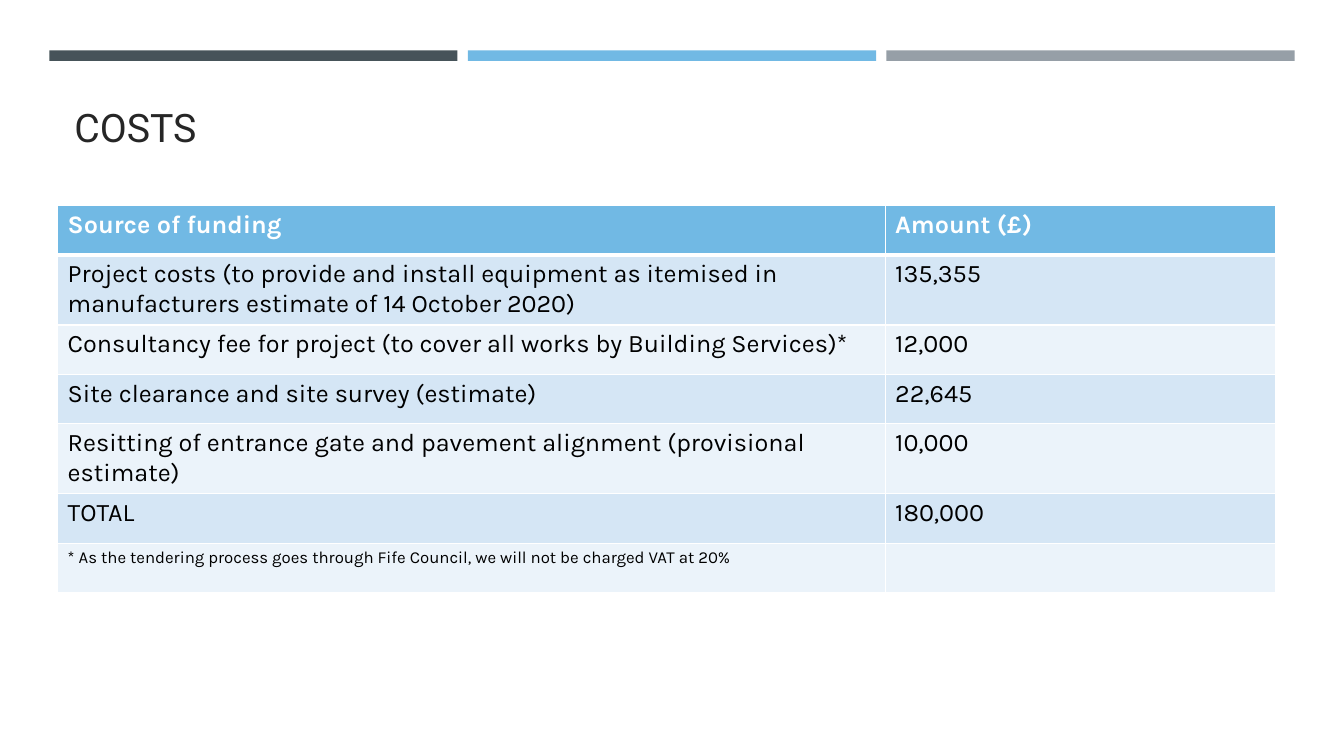
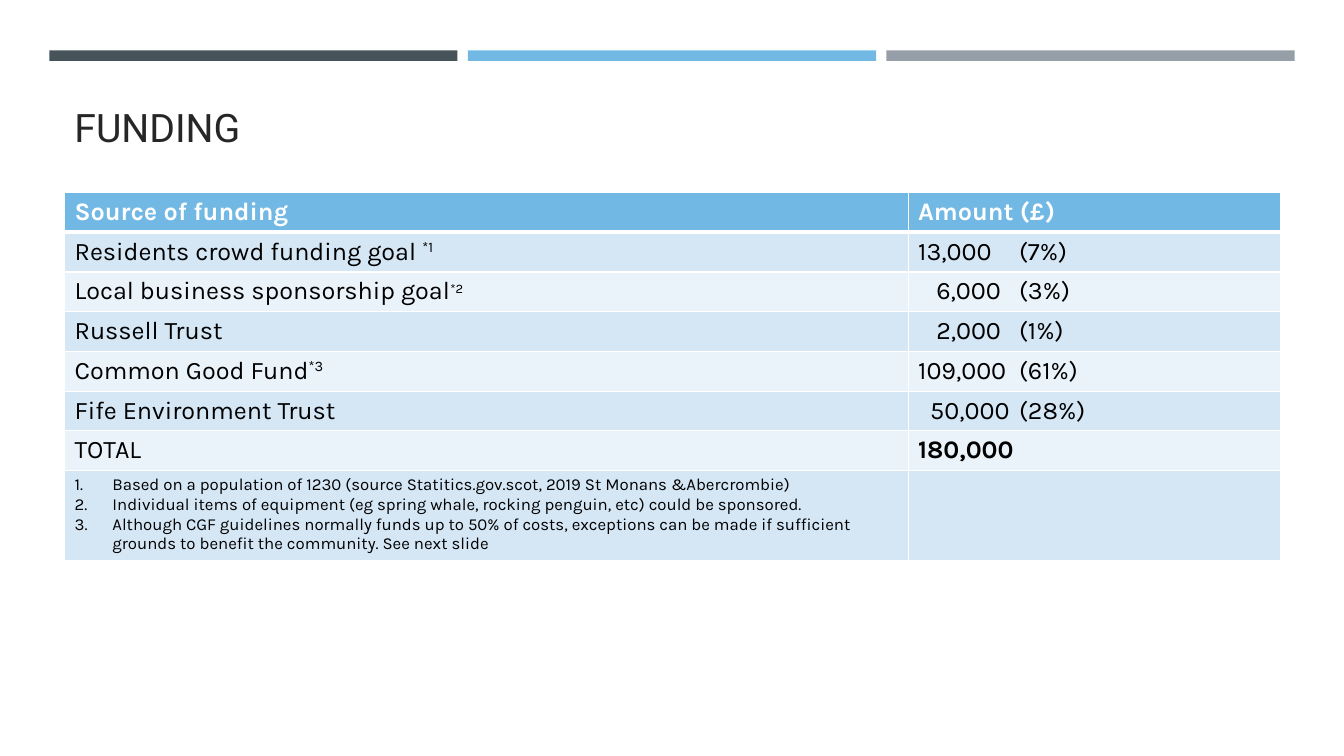
"""Build the costs and funding slides."""
from lxml import etree
from pptx import Presentation
from pptx.dml.color import RGBColor
from pptx.enum import shapes, text
from pptx.oxml.ns import qn
from pptx.util import Pt

COLOURS = {
    "slate": "465359", "blue": "71B9E4", "grey": "969FA7", "title": "262626",
    "white": "FFFFFF", "black": "000000", "odd": "D5E6F5", "even": "EBF3FA",
}
TITLE_FONT, BODY_FONT = "Roboto", "Karla"
BODY_SIZE, NOTE_SIZE = 18, 12
HEADER = ("Source of funding", "Amount (£)")

COSTS = [
    HEADER,
    ("Project costs (to provide and install equipment as itemised in "
     "manufacturers estimate of 14 October 2020)", "135,355"),
    ("Consultancy fee for project (to cover all works by Building Services)*", "12,000"),
    ("Site clearance and site survey (estimate)", "22,645"),
    ("Resitting of entrance gate and pavement alignment (provisional estimate)", "10,000"),
    ("TOTAL", "180,000"),
    ("* As the tendering process goes through Fife Council, "
     "we will not be charged VAT at 20%", ""),
]
FUNDING = [
    HEADER,
    ("Residents crowd funding goal ", "13,000\t(7%)"),
    ("Local business sponsorship goal", "6,000\t(3%)"),
    ("Russell Trust", "2,000\t(1%)"),
    ("Common Good Fund", "109,000\t(61%)"),
    ("Fife Environment Trust", "50,000\t(28%)"),
    ("TOTAL", "180,000"),
    ("Based on a population of 1230 (source Statitics.gov.scot, 2019 St Monans &Abercrombie)\n"
     "Individual items of equipment (eg spring whale, rocking penguin, etc) could be sponsored.\n"
     "Although CGF guidelines normally funds up to 50% of costs, exceptions can be made if "
     "sufficient grounds to benefit the community. See next slide", ""),
]
FOOTNOTE_MARKS = {1: ("*1", 18), 2: ("*2", 16), 4: ("*3", 18)}
AMOUNT_INDENTS = {1: 0, 2: 12.9, 3: 12.9, 4: 0, 5: 8.6}


def colour(name):
    return RGBColor.from_string(COLOURS[name])


def style_font(font, face, size, shade, bold=False):
    font.name, font.size, font.bold = face, Pt(size), bold
    font.color.rgb = colour(shade)


def add_page(deck, title):
    page = deck.slides.add_slide(deck.slide_layouts[6])
    for index, shade in enumerate(("slate", "blue", "grey")):
        bar = page.shapes.add_shape(shapes.MSO_SHAPE.RECTANGLE, Pt(35.2 + index * 299),
                                    Pt(36), Pt(291.6), Pt(7.5))
        bar.shadow.inherit = False
        bar.fill.solid()
        bar.fill.fore_color.rgb = colour(shade)
        bar.line.fill.background()
    box = page.shapes.add_textbox(Pt(46.1), Pt(55), Pt(868.3), Pt(56))
    frame = box.text_frame
    frame.word_wrap = True
    frame.vertical_anchor = text.MSO_ANCHOR.BOTTOM
    frame.text = title
    style_font(frame.paragraphs[0].runs[0].font, TITLE_FONT, 28, "title")
    return page


def set_borders(cell, top, bottom):
    properties = cell._tc.get_or_add_tcPr()
    for side, width in (("L", 1), ("R", 1), ("T", top), ("B", bottom)):
        line = etree.SubElement(properties, qn(f"a:ln{side}"), w=str(Pt(width)))
        fill = etree.SubElement(line, qn("a:solidFill"))
        etree.SubElement(fill, qn("a:srgbClr"), val=COLOURS["white"])


def fill_cell(cell, content, row, size):
    set_borders(cell, 3 if row == 1 else 1, 3 if row == 0 else 1)
    cell.margin_top = cell.margin_bottom = Pt(3.4)
    cell.fill.solid()
    cell.fill.fore_color.rgb = colour("blue" if row == 0 else "odd" if row % 2 else "even")
    cell.text_frame.text = content
    for para in cell.text_frame.paragraphs:
        shade = "white" if row == 0 else "black"
        style_font(para.font, BODY_FONT, size, shade, row == 0)
        for span in para.runs:
            style_font(span.font, BODY_FONT, size, shade, row == 0)


def add_table(page, rows, left, top, widths, heights):
    frame = page.shapes.add_table(len(rows), len(widths), Pt(left), Pt(top),
                                  Pt(sum(widths)), Pt(sum(heights)))
    table = frame.table
    for column, width in zip(table.columns, widths):
        column.width = Pt(width)
    for index, (contents, height) in enumerate(zip(rows, heights)):
        table.rows[index].height = Pt(height)
        size = NOTE_SIZE if index == len(rows) - 1 else BODY_SIZE
        for column, content in enumerate(contents):
            fill_cell(table.cell(index, column), content, index, size)
    return table


def add_footnote_mark(para, mark, size):
    span = para.add_run()
    span.text = mark
    style_font(span.font, BODY_FONT, size, "black")
    span._r.get_or_add_rPr().set("baseline", "30000")


def align_amount(para, indent):
    properties = para._p.get_or_add_pPr()
    properties.set("marL", "0")
    properties.set("indent", str(Pt(indent)))
    tabs = etree.Element(qn("a:tabLst"))
    etree.SubElement(tabs, qn("a:tab"), pos=str(Pt(72)), algn="l")
    properties.insert(0, tabs)


def number_para(para):
    properties = para._p.get_or_add_pPr()
    properties.set("marL", str(Pt(27)))
    properties.set("indent", str(Pt(-27)))
    properties.insert(0, etree.Element(qn("a:buAutoNum"), type="arabicPeriod"))


def add_funding_details(table):
    for row, (mark, size) in FOOTNOTE_MARKS.items():
        add_footnote_mark(table.cell(row, 0).text_frame.paragraphs[0], mark, size)
    for row, indent in AMOUNT_INDENTS.items():
        align_amount(table.cell(row, 1).text_frame.paragraphs[0], indent)
    table.cell(6, 1).text_frame.paragraphs[0].runs[0].font.bold = True
    for para in table.cell(7, 0).text_frame.paragraphs:
        number_para(para)


def main():
    deck = Presentation()
    deck.slide_width, deck.slide_height = Pt(960), Pt(540)
    add_table(add_page(deck, "COSTS"), COSTS, 41.2, 146.9, (591.1, 278.6), [35.3] * 7)
    funding = add_table(add_page(deck, "FUNDING"), FUNDING, 46.1, 137.5,
                        (602.6, 265.7), [26.6] * 7 + [50.4])
    add_funding_details(funding)
    deck.save("out.pptx")


if __name__ == "__main__":
    main()
